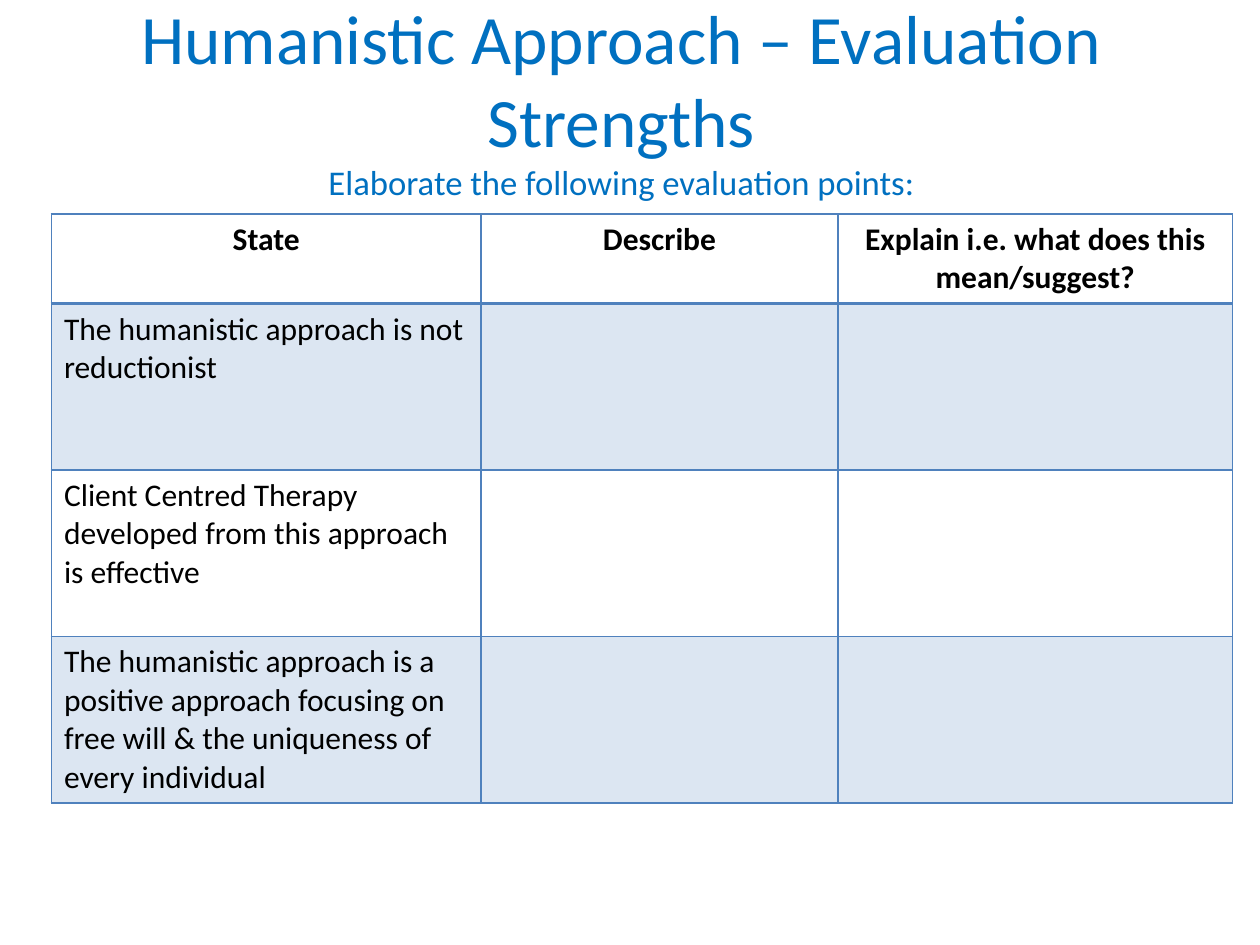
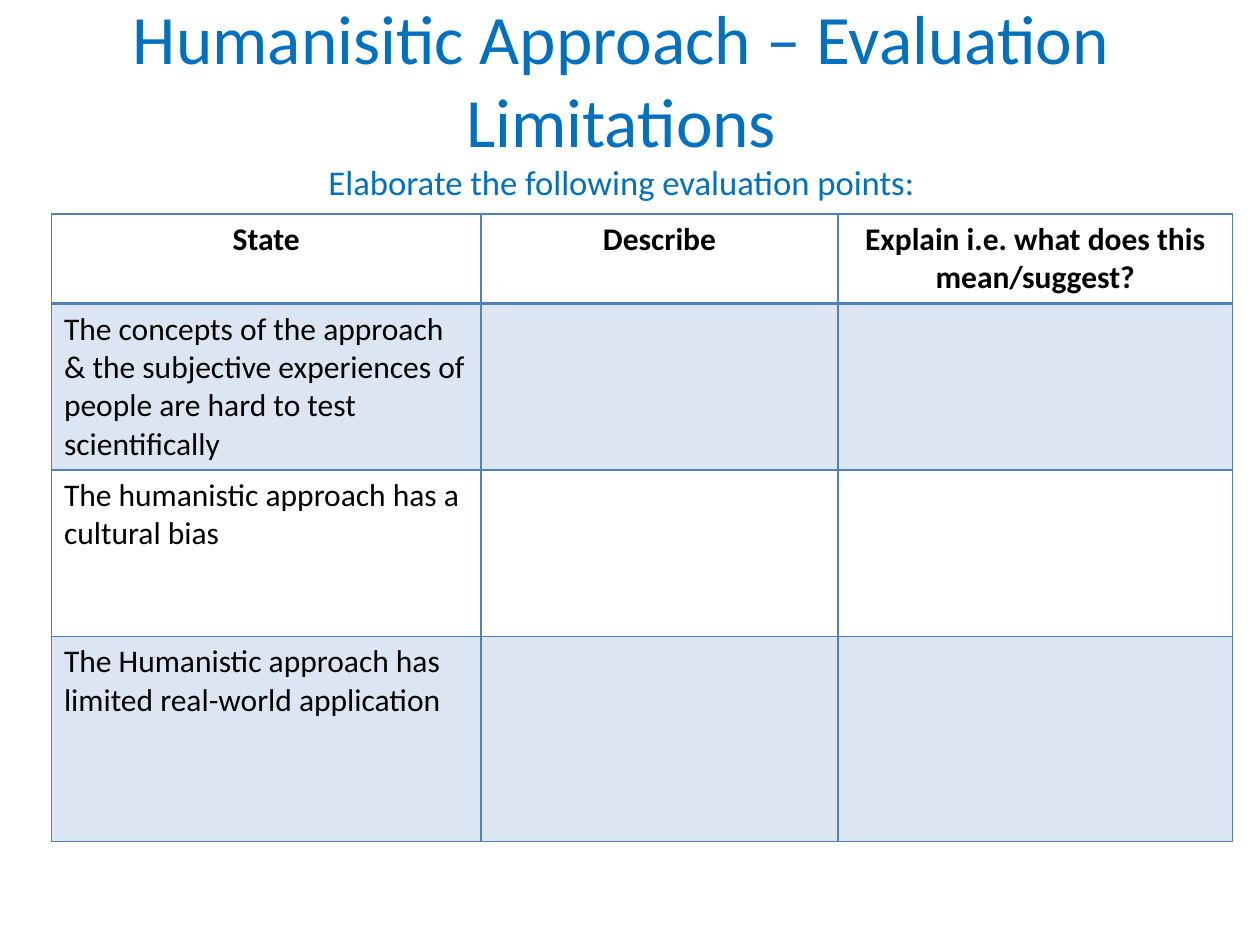
from dataclasses import dataclass

from lxml.etree import SubElement
from pptx import Presentation
from pptx.dml.color import RGBColor
from pptx.enum.text import MSO_ANCHOR, PP_ALIGN
from pptx.oxml.ns import qn
from pptx.util import Pt


@dataclass(frozen=True)
class Theme:
    font: str = "Calibri"
    title_color: str = "0070C0"
    text_color: str = "000000"
    border_color: str = "4F81BD"
    band_color: str = "DCE6F2"
    title_size: float = 39.6
    subtitle_size: float = 19.8
    cell_size: float = 18
    thin_line: float = 1
    thick_line: float = 2


@dataclass(frozen=True)
class EvaluationPage:
    title: str
    aspect: str
    points: tuple[str, ...]
    last_row_height: float


THEME = Theme()
PROMPT = "Elaborate the following evaluation points:"
HEADINGS = ("State", "Describe", "Explain i.e. what does this mean/suggest?")
COLUMN_WIDTHS = (245.5, 204, 225.5)
TABLE_LEFT, TABLE_TOP = 29.4, 122.4
HEADER_HEIGHT, POINT_HEIGHT = 51.2, 95.1

PAGES = (
    EvaluationPage(
        "Humanistic Approach – Evaluation",
        "Strengths",
        (
            "The humanistic approach is not reductionist",
            "Client Centred Therapy developed from this approach is effective",
            "The humanistic approach is a positive approach focusing on "
            "free will & the uniqueness of every individual",
        ),
        POINT_HEIGHT,
    ),
    EvaluationPage(
        "Humanisitic Approach – Evaluation",
        "Limitations",
        (
            "The concepts of the approach & the subjective experiences of "
            "people are hard to test scientifically",
            "The humanistic approach has a cultural bias",
            "The Humanistic approach has limited real-world application",
        ),
        117.1,
    ),
)


def style_span(span, size: float, color: str, bold: bool = False) -> None:
    span.font.name = THEME.font
    span.font.size = Pt(size)
    span.font.bold = bold
    span.font.color.rgb = RGBColor.from_string(color)


def add_title(page, content: EvaluationPage) -> None:
    box = page.shapes.add_textbox(Pt(31), Pt(26), Pt(648), Pt(61))
    frame = box.text_frame
    frame.word_wrap = True
    frame.vertical_anchor = MSO_ANCHOR.MIDDLE
    para = frame.paragraphs[0]
    para.text = "\v".join((content.title, content.aspect, PROMPT))
    para.alignment = PP_ALIGN.CENTER
    sizes = (THEME.title_size, THEME.title_size, THEME.subtitle_size)
    for span, size in zip(para.runs, sizes):
        style_span(span, size, THEME.title_color)


def add_borders(cell, row: int) -> None:
    properties = cell._tc.get_or_add_tcPr()
    thick_side = {0: "lnB", 1: "lnT"}.get(row)
    for side in ("lnL", "lnR", "lnT", "lnB"):
        width = THEME.thick_line if side == thick_side else THEME.thin_line
        line = SubElement(properties, qn(f"a:{side}"), w=str(Pt(width)))
        fill = SubElement(line, qn("a:solidFill"))
        SubElement(fill, qn("a:srgbClr"), val=THEME.border_color)


def fill_cell(cell, row: int, text: str) -> None:
    add_borders(cell, row)
    if row % 2:
        cell.fill.solid()
        cell.fill.fore_color.rgb = RGBColor.from_string(THEME.band_color)
    else:
        cell.fill.background()
    if text:
        cell.text_frame.text = text
        para = cell.text_frame.paragraphs[0]
        para.alignment = PP_ALIGN.LEFT if row else PP_ALIGN.CENTER
        style_span(para.runs[0], THEME.cell_size, THEME.text_color, bold=row == 0)


def add_evaluation_table(page, content: EvaluationPage) -> None:
    rows = [HEADINGS] + [(point, "", "") for point in content.points]
    heights = [HEADER_HEIGHT] + [POINT_HEIGHT] * (len(rows) - 2)
    heights.append(content.last_row_height)
    table = page.shapes.add_table(
        len(rows), len(HEADINGS), Pt(TABLE_LEFT), Pt(TABLE_TOP),
        Pt(sum(COLUMN_WIDTHS)), Pt(sum(heights)),
    ).table
    table.first_row = False
    table.horz_banding = False
    for column, width in zip(table.columns, COLUMN_WIDTHS):
        column.width = Pt(width)
    for row, (texts, height) in enumerate(zip(rows, heights)):
        table.rows[row].height = Pt(height)
        for column, text in enumerate(texts):
            fill_cell(table.cell(row, column), row, text)


def main() -> None:
    deck = Presentation()
    deck.slide_width, deck.slide_height = Pt(720), Pt(540)
    for content in PAGES:
        page = deck.slides.add_slide(deck.slide_layouts[6])
        add_title(page, content)
        add_evaluation_table(page, content)
    deck.save("out.pptx")


if __name__ == "__main__":
    main()
